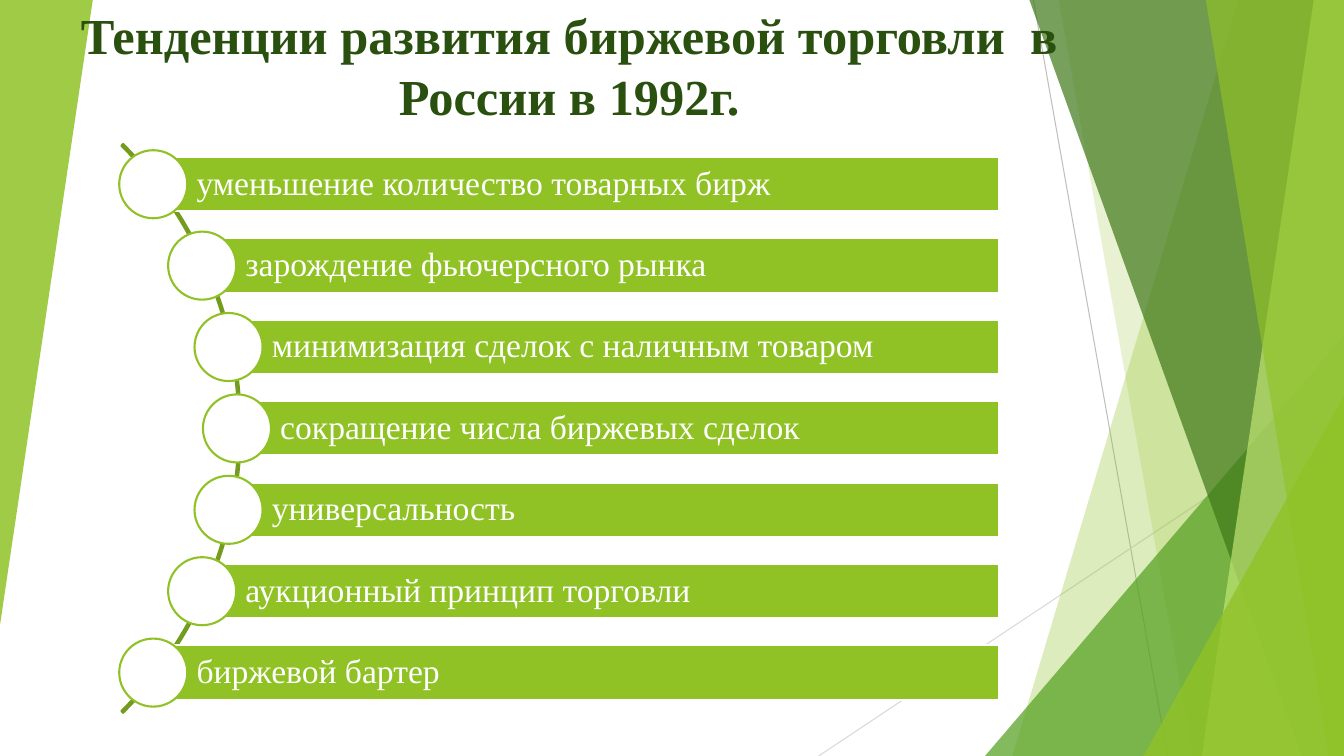
from dataclasses import dataclass
from math import sqrt

from lxml.etree import SubElement
from pptx import Presentation
from pptx.dml.color import RGBColor
from pptx.enum.shapes import MSO_CONNECTOR, MSO_SHAPE
from pptx.enum.text import MSO_ANCHOR, PP_ALIGN
from pptx.oxml.ns import qn
from pptx.util import Inches, Pt


@dataclass(frozen=True)
class Theme:
    font: str = "Times New Roman"
    title_size: float = 36
    item_size: float = 24
    outline: float = 1.5
    hairline: float = 0.75
    title: str = "2A5010"
    white: str = "FFFFFF"
    lime: str = "90C226"
    pale_lime: str = "C0E474"
    green: str = "54A021"
    forest: str = "3F7819"
    arc: str = "739B1E"
    grey: str = "BFBFBF"
    light_grey: str = "D9D9D9"


@dataclass(frozen=True)
class Box:
    left: float
    top: float
    width: float
    height: float

    @property
    def right(self):
        return self.left + self.width

    @property
    def bottom(self):
        return self.top + self.height

    def lengths(self):
        return [Inches(value) for value in (self.left, self.top, self.width, self.height)]


THEME = Theme()
SLIDE = Box(0, 0, 13.33, 7.5)
TITLE = "Тенденции развития биржевой торговли  в России в 1992г."
TRENDS = [
    "уменьшение количество товарных бирж",
    "зарождение фьючерсного рынка",
    "минимизация сделок с наличным товаром",
    "сокращение числа биржевых сделок",
    "универсальность",
    "аукционный принцип торговли",
    "биржевой бартер",
]


def paint(shape, fill=None, line=None, opacity=100):
    shape.shadow.inherit = False
    if fill:
        shape.fill.solid()
        shape.fill.fore_color.rgb = RGBColor.from_string(fill)
        if opacity < 100:
            color = shape.fill._xPr.find(qn("a:solidFill"))[0]
            SubElement(color, qn("a:alpha"), val=str(opacity * 1000))
    else:
        shape.fill.background()
    if line:
        shape.line.color.rgb = RGBColor.from_string(line)
        shape.line.width = Pt(THEME.outline)
    else:
        shape.line.fill.background()


def write(shape, text, size, color, bold, frame_format, para_format):
    frame = shape.text_frame
    para = frame.paragraphs[0]
    span = para.add_run()
    span.text = text
    span.font.color.rgb = RGBColor.from_string(color)
    font_format = {"name": THEME.font, "size": Pt(size), "bold": bold}
    for target, values in (
        (frame, {"word_wrap": True, **frame_format}),
        (para, para_format),
        (span.font, font_format),
    ):
        for name, value in values.items():
            setattr(target, name, value)


def add_hairline(page, start, end, color):
    line = page.shapes.add_connector(
        MSO_CONNECTOR.STRAIGHT, *(Inches(value) for value in (*start, *end))
    )
    line.line.color.rgb = RGBColor.from_string(color)
    line.line.width = Pt(THEME.hairline)
    SubElement(line._element.spPr, qn("a:effectLst"))


def add_triangle(page, box, color, opacity, rotation=0):
    triangle = page.shapes.add_shape(MSO_SHAPE.ISOSCELES_TRIANGLE, *box.lengths())
    triangle.adjustments[0] = 1
    triangle.rotation = rotation
    paint(triangle, color, opacity=opacity)


def add_band(page, box, top_left, bottom_left, color, opacity):
    builder = page.shapes.build_freeform(Inches(top_left), Inches(box.top), 1.0)
    corners = [(box.right, box.top), (box.right, box.bottom), (bottom_left, box.bottom)]
    builder.add_line_segments([(Inches(x), Inches(y)) for x, y in corners])
    paint(builder.convert_to_shape(), color, opacity=opacity)


def add_corner(page, box, width, height, color, opacity):
    corner = Box(box.right - width, box.bottom - height, width, height)
    add_triangle(page, corner, color, opacity)


def add_backdrop(page, box):
    add_hairline(page, (10.25, box.top), (11.58, box.bottom), THEME.grey)
    add_hairline(page, (box.right, 4.03), (8.12, box.bottom), THEME.light_grey)
    facets = [
        (add_band, 12.28, 10.04, THEME.lime, 30),
        (add_band, 10.5, 11.83, THEME.lime, 20),
        (add_corner, 3.56, 4.17, THEME.green, 72),
        (add_band, 10.21, 12.91, THEME.forest, 70),
        (add_band, 13.03, 11.92, THEME.pale_lime, 70),
        (add_band, 11.96, 13.18, THEME.lime, 65),
        (add_corner, 1.99, 3.57, THEME.lime, 80),
    ]
    for draw, first, second, color, opacity in facets:
        draw(page, box, first, second, color, opacity)
    add_triangle(page, Box(box.left, box.top, 0.92, 6.2), THEME.lime, 85, rotation=180)


def add_title(page, box):
    title = page.shapes.add_textbox(*box.lengths())
    write(title, TITLE, THEME.title_size, THEME.title, True,
          {"vertical_anchor": MSO_ANCHOR.BOTTOM}, {"alignment": PP_ALIGN.CENTER})


def add_trend(page, box, text):
    bar = page.shapes.add_shape(MSO_SHAPE.RECTANGLE, *box.lengths())
    paint(bar, THEME.lime, THEME.white)
    margin = Inches(0.07)
    write(bar, text, THEME.item_size, THEME.white, False,
          {"vertical_anchor": MSO_ANCHOR.MIDDLE, "margin_left": Inches(0.43),
           "margin_right": margin, "margin_top": margin, "margin_bottom": margin},
          {"alignment": PP_ALIGN.LEFT, "line_spacing": 0.9})
    size = box.height * 1.25
    middle = box.top + box.height / 2
    dot = Box(box.left - size / 2, middle - size / 2, size, size)
    circle = page.shapes.add_shape(MSO_SHAPE.OVAL, *dot.lengths())
    paint(circle, THEME.white, THEME.lime)


def add_trend_list(page, box):
    radius = 3.99
    center_x, center_y = box.left - 2.78, box.top + box.height / 2
    ring = Box(center_x - radius, center_y - radius, 2 * radius, 2 * radius)
    arc = page.shapes.add_shape(MSO_SHAPE.BLOCK_ARC, *ring.lengths())
    for index, value in enumerate((189, 27, 0.003)):
        arc.adjustments[index] = value
    paint(arc, line=THEME.arc)

    bar_height = 0.54
    dot_height = bar_height * 1.25
    step = (box.height - dot_height) / (len(TRENDS) - 1)
    for index, text in enumerate(TRENDS):
        offset = (index - (len(TRENDS) - 1) / 2) * step
        left = center_x + sqrt((radius - 0.04) ** 2 - offset ** 2)
        top = center_y + offset - bar_height / 2
        add_trend(page, Box(left, top, box.right - left, bar_height), text)


def main():
    deck = Presentation()
    deck.slide_width, deck.slide_height = Inches(SLIDE.width), Inches(SLIDE.height)
    page = deck.slides.add_slide(deck.slide_layouts[6])
    add_backdrop(page, SLIDE)
    add_title(page, Box(0.17, 0, 10.95, 1.29))
    add_trend_list(page, Box(1.18, 1.49, 8.73, 5.52))
    deck.save("out.pptx")


if __name__ == "__main__":
    main()
